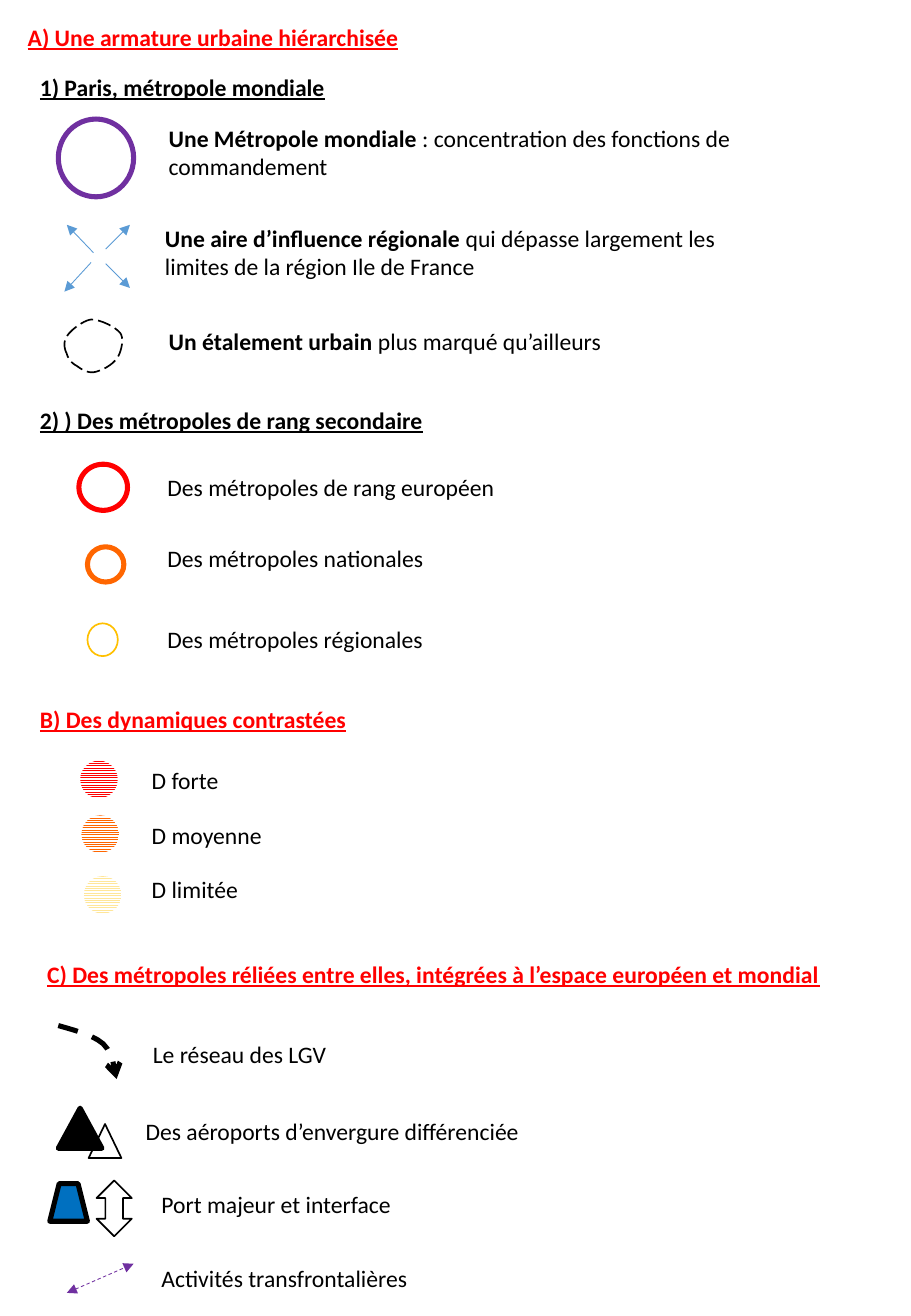
import pptx
import pptx.util
import pptx.dml.color
import pptx.enum.dml
import pptx.enum.shapes
import pptx.enum.text
import pptx.oxml.ns
from lxml import etree

SHAPE = pptx.enum.shapes.MSO_SHAPE
DASH = pptx.enum.dml.MSO_LINE
CELL = 0.1  # grid cell in inches: 75 columns by 108.3 rows
COLS, ROWS = 75, 108.3
BLACK, RED, ORANGE, PURPLE = "000000", "FF0000", "FF6600", "7030A0"


def grid(n):
    return pptx.util.Inches(n * CELL)


def color(hex_code):
    return pptx.dml.color.RGBColor.from_string(hex_code)


def add_text(s, col, row, width, runs, hex_code=BLACK, underline=False, wrap=True, height=3.4):
    """Runs are (text, bold) pairs."""
    tb = s.shapes.add_textbox(grid(col), grid(row), grid(width), grid(height))
    tf = tb.text_frame
    tf.word_wrap = wrap
    tf.auto_size = pptx.enum.text.MSO_AUTO_SIZE.SHAPE_TO_FIT_TEXT
    p = tf.paragraphs[0]
    for text, bold in runs:
        r = p.add_run()
        r.text = text
        r.font.name = "Calibri"
        r.font.size = pptx.util.Pt(14)
        r.font.bold = bold
        r.font.underline = underline
        r.font.color.rgb = color(hex_code)


def add_heading(s, col, row, width, text, hex_code=BLACK, wrap=False):
    add_text(s, col, row, width, [(text, True)], hex_code, True, wrap)


def set_line(sp, hex_code, weight, dash=None, head=None, tail=None):
    sp.line.color.rgb = color(hex_code)
    sp.line.width = pptx.util.Pt(weight)
    if dash:
        sp.line.dash_style = dash
    ln = sp.line._get_or_add_ln()
    for tag, kind in (("a:headEnd", head), ("a:tailEnd", tail)):
        if kind:
            etree.SubElement(ln, pptx.oxml.ns.qn(tag)).set("type", kind)


def add_symbol(s, kind, col, row, width, height, line=None, weight=1, fill=None, rotation=0):
    sp = s.shapes.add_shape(kind, grid(col), grid(row), grid(width), grid(height))
    sp.shadow.inherit = False
    sp.rotation = rotation
    if fill:
        sp.fill.solid()
        sp.fill.fore_color.rgb = color(fill)
    else:
        sp.fill.background()
    if line:
        set_line(sp, line, weight)
    else:
        sp.line.fill.background()
    return sp


def add_arrow(s, x1, y1, x2, y2, hex_code, **style):
    cn = s.shapes.add_connector(pptx.enum.shapes.MSO_CONNECTOR.STRAIGHT,
                                grid(x1), grid(y1), grid(x2), grid(y2))
    set_line(cn, hex_code, 0.5, tail="triangle", **style)
    etree.SubElement(cn._element.spPr, pptx.oxml.ns.qn("a:effectLst"))


def add_curve(s, col, row, points, closed, weight, dash, tail=None, steps=12):
    """Points are a start followed by three per cubic Bezier segment."""
    pts = [(grid(col + x), grid(row + y)) for x, y in points]
    trace = []
    for i in range(0, len(pts) - 1, 3):
        for k in range(1, steps + 1):
            t = k / steps
            weights = ((1 - t) ** 3, 3 * t * (1 - t) ** 2, 3 * t * t * (1 - t), t ** 3)
            trace.append(tuple(round(sum(w * pt[axis] for w, pt in zip(weights, pts[i:i + 4])))
                               for axis in (0, 1)))
    fb = s.shapes.build_freeform(*pts[0], scale=1.0)
    fb.add_line_segments(trace, close=closed)
    sp = fb.convert_to_shape()
    sp.shadow.inherit = False
    sp.fill.background()
    set_line(sp, BLACK, weight, dash, tail=tail)


def world_metropolis(s, col, row):
    add_heading(s, col, row, 25.6, "1) Paris, métropole mondiale")
    # Ring
    add_symbol(s, SHAPE.OVAL, col + 2.5, row + 4.3, 6.2, 6.4, PURPLE, 3)
    add_text(s, col + 10.6, row + 4.2, 51.7, [
        ("Une Métropole mondiale", True),
        (" : concentration des fonctions de commandement", False)], height=5.7)
    # Four arrows pointing outwards
    for x1, y1, x2, y2 in ((6.4, 15, 8.4, 13), (5.4, 15.3, 3.2, 13),
                           (6.4, 16.2, 8.4, 18.2), (5.2, 16.1, 3, 18.5)):
        add_arrow(s, col + x1, row + y1, col + x2, row + y2, "5B9BD5")
    add_text(s, col + 10.3, row + 12.4, 51.7, [
        ("Une aire d’influence régionale ", True),
        ("qui dépasse largement les limites de la région Ile de France", False)], height=5.7)
    # Urban sprawl outline
    sprawl = [(0.2, 2.8), (0, 2.4), (-0.1, 1.9), (0.2, 1.4), (0.5, 0.9), (1.5, 0.1), (2.2, 0),
              (2.9, 0), (4, 0.5), (4.5, 1), (5, 1.4), (4.7, 2.6), (4.4, 3.1),
              (4, 3.7), (3.3, 4.1), (2.6, 4.3), (1.9, 4.5), (1.3, 4), (1, 3.8),
              (0.6, 3.6), (0.3, 3.2), (0.2, 2.8)]
    add_curve(s, col + 3, row + 20.8, sprawl, True, 1, DASH.LONG_DASH)
    add_text(s, col + 10.6, row + 20.9, 41.3, [
        ("Un étalement urbain ", True), ("plus marqué qu’ailleurs", False)])


def secondary_metropolises(s, col, row):
    add_heading(s, col, row, 33.7, "2) ) Des métropoles de rang secondaire")
    for x, y, w, h, hex_code, weight, label_y, rank in (
            (4.2, 5.3, 4, 3.8, RED, 3, 5.5, "de rang européen"),
            (4.9, 12.1, 3, 2.9, ORANGE, 3, 11.4, "nationales"),
            (4.9, 18.4, 2.5, 2.7, "FFC000", 1, 18, "régionales")):
        add_symbol(s, SHAPE.OVAL, col + x, row + y, w, h, hex_code, weight)
        add_text(s, col + 10.5, row + label_y, 51.7, [("Des métropoles " + rank, False)])


def dynamics(s, col, row):
    add_heading(s, col, row, 27.4, "B) Des dynamiques contrastées", RED)
    for x, y, hex_code, label_y, label in ((4.3, 5.1, RED, 5, "D forte"),
                                           (4.4, 9.6, ORANGE, 9.6, "D moyenne"),
                                           (4.6, 14.6, "FFE699", 14, "D limitée")):
        disc = add_symbol(s, SHAPE.OVAL, col + x, row + y, 3.1, 3.1)
        disc.fill.patterned()
        disc.fill.pattern = pptx.enum.dml.MSO_PATTERN.LIGHT_HORIZONTAL
        disc.fill.fore_color.rgb = color(hex_code)
        disc.fill.back_color.rgb = color("FFFFFF")
        add_text(s, col + 9.2, row + label_y, 12.8, [(label, False)])


def connections(s, col, row):
    add_heading(s, col, row, 71, "C) Des métropoles réliées entre elles, "
                "intégrées à l’espace européen et mondial", RED, wrap=True)
    # High-speed rail
    rail = [(0, 0), (1.4, 0.4), (2.9, 0.8), (3.7, 1.5), (4.5, 2.3), (4.6, 3.4), (4.8, 4.4)]
    add_curve(s, col + 1.9, row + 5.9, rail, False, 3, DASH.DASH, "arrow", steps=6)
    # Airports
    add_symbol(s, SHAPE.ISOSCELES_TRIANGLE, col + 1.9, row + 12.7, 3.6, 3.3, BLACK, 3, BLACK)
    add_symbol(s, SHAPE.ISOSCELES_TRIANGLE, col + 4.4, row + 14, 2.7, 2.8, BLACK)
    # Port and interface
    add_symbol(s, SHAPE.TRAPEZOID, col + 1.2, row + 18.9, 3.1, 3.1, BLACK, 3, "0070C0")
    add_symbol(s, SHAPE.LEFT_RIGHT_ARROW, col + 4.2, row + 19.5, 4.6, 2.9, BLACK, rotation=90)
    # Cross-border activity
    add_arrow(s, col + 2.6, row + 27.9, col + 8.1, row + 25.5, PURPLE,
              dash=DASH.DASH, head="triangle")
    for x, y, width, label in ((8.7, 6.6, 19.4, "Le réseau des LGV"),
                               (8.1, 12.9, 35.4+4, "Des aéroports d’envergure différenciée"),
                               (9.4, 18.9, 22.9, "Port majeur et interface"),
                               (9.4, 25, 22.9, "Activités transfrontalières")):
        add_text(s, col + x, row + y, width, [(label, False)])


def main():
    prs = pptx.Presentation()
    prs.slide_width, prs.slide_height = grid(COLS), grid(ROWS)
    s = prs.slides.add_slide(prs.slide_layouts[6])
    add_heading(s, 1.3, 1.4, 32.7, "A) Une armature urbaine hiérarchisée", RED)
    world_metropolis(s, 2.3, 5.5)
    secondary_metropolises(s, 2.3, 32.9)
    dynamics(s, 2.3, 57.5)
    connections(s, 2.9, 78.5)
    prs.save("out.pptx")


if __name__ == "__main__":
    main()
